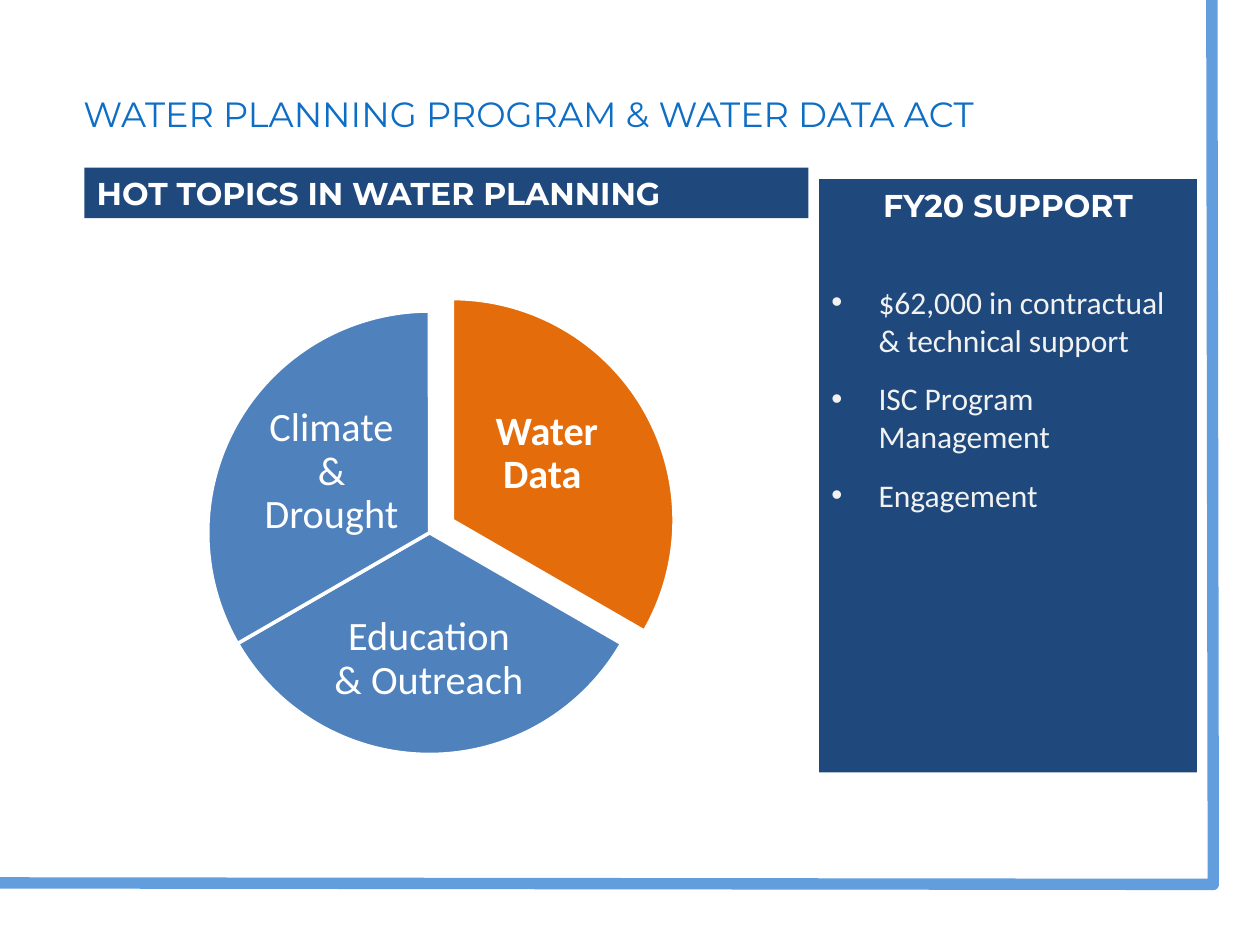
from lxml import etree
from pptx import Presentation
from pptx.dml.color import RGBColor
from pptx.enum import shapes, text
from pptx.oxml import ns
from pptx.util import Cm, Pt

HUES = {"title": "0E6EC5", "navy": "1F497D", "white": "FFFFFF", "pale": "F2F2F2",
        "orange": "E46C0A", "blue": "4F81BD", "frame": "629EDE"}
HEAD = {"name": "Montserrat", "size": Pt(18), "bold": True}
ITEM = {"name": "Calibri", "size": Pt(18), "bold": False}
LABEL = {"name": "Calibri", "size": Pt(23)}
LEFT, MID = text.PP_ALIGN.LEFT, text.PP_ALIGN.CENTER
TOP, CORE = text.MSO_ANCHOR.TOP, text.MSO_ANCHOR.MIDDLE


def hue(key):
    return RGBColor.from_string(HUES[key])


def assign(item, vals):
    for key, val in vals.items():
        setattr(item, key, val)


def place(shape, box):
    assign(shape, dict(zip(("left", "top", "width", "height"), map(Cm, box))))


def fill(shape, key):
    shape.fill.solid()
    shape.fill.fore_color.rgb = hue(key)


def setup(frame, anchor=TOP, pads=(0.25, 0.13, 0.25, 0.13)):
    """Wrap the text, fix its anchor and set its insets in cm."""
    assign(frame, {"word_wrap": True, "auto_size": text.MSO_AUTO_SIZE.NONE,
                   "vertical_anchor": anchor})
    sides = ("margin_left", "margin_top", "margin_right", "margin_bottom")
    assign(frame, dict(zip(sides, map(Cm, pads))))


def write(para, words, font, key, **vals):
    assign(para, {"alignment": LEFT, "space_before": Pt(0), **vals})
    run = para.add_run()
    run.text = words
    assign(run.font, font)
    run.font.color.rgb = hue(key)


def bullet(para, char=None, hang=0):
    """Give a paragraph a bullet, or none, with a hanging indent in cm."""
    props = para._p.get_or_add_pPr()
    props.set("marL", str(Cm(hang)))
    props.set("indent", str(-Cm(hang)))
    mark = etree.SubElement(props, ns.qn("a:buChar" if char else "a:buNone"))
    if char:
        mark.set("char", char)


def title(slide, box):
    shape = slide.shapes.title
    place(shape, box)
    setup(shape.text_frame, pads=(0, 0.18, 0, 0))
    write(shape.text_frame.paragraphs[0], "WATER PLANNING PROGRAM & WATER DATA ACT",
          {"name": "Montserrat", "size": Pt(20)}, "title", line_spacing=0.9)


def banner(slide, box):
    shape = slide.shapes.add_shape(shapes.MSO_SHAPE.RECTANGLE, *map(Cm, box))
    shape.shadow.inherit = False
    fill(shape, "navy")
    shape.line.fill.background()
    setup(shape.text_frame)
    write(shape.text_frame.paragraphs[0], "HOT TOPICS IN WATER PLANNING", HEAD, "white")


def support(slide, box):
    shape = slide.placeholders[1]
    place(shape, box)
    fill(shape, "navy")
    frame = shape.text_frame
    setup(frame)
    bullet(frame.paragraphs[0])
    write(frame.paragraphs[0], "FY20 SUPPORT", HEAD, "white", alignment=MID)
    items = ("$62,000 in contractual & technical support",
             "ISC Program Management", "Engagement")
    for i, words in enumerate(items):
        para = frame.add_paragraph()
        bullet(para, "•", 0.95)
        write(para, words, ITEM, "pale", space_before=Pt(12 if i else 34))


def topics(slide, box):
    """Draw three equal wedges with labels, the first one pulled out."""
    x, y, w, h = box
    group = slide.shapes.add_group_shape().shapes
    parts = (
        ("Water Data ", "orange", True, (0.46, -0.25), (5.31, 1.4, 3.05, 2.97)),
        ("Education & Outreach", "blue", False, (0, 0), (2.44, 5.64, 4.04, 2.77)),
        ("Climate & Drought", "blue", False, (0, 0), (0.97, 1.76, 3.05, 2.97)),
    )
    for i, (words, key, bold, (dx, dy), (lx, ly, lw, lh)) in enumerate(parts):
        wedge = group.add_shape(shapes.MSO_SHAPE.PIE,
                                *map(Cm, (x + dx, y + dy, w, h)))
        for j in range(2):  # 0.6 units to a degree, clockwise from the right
            wedge.adjustments[j] = (270 + 120 * (i + j)) % 360 * 0.6
        wedge.shadow.inherit = False
        fill(wedge, key)
        wedge.line.color.rgb = hue("white")
        wedge.line.width = Pt(2)
        label = group.add_textbox(*map(Cm, (x + lx, y + ly, lw, lh)))
        setup(label.text_frame, CORE, (0.08,) * 4)
        write(label.text_frame.paragraphs[0], words, {**LABEL, "bold": bold},
              "white", alignment=MID, line_spacing=0.9)


def border(slide, box):
    x, y, w, h = box
    pen = slide.shapes.build_freeform(Cm(x + w - 0.03), Cm(y))
    pen.add_line_segments([(Cm(x + w), Cm(y + h)), (Cm(x), Cm(y + h - 0.03))],
                          close=False)
    shape = pen.convert_to_shape()
    shape.shadow.inherit = False
    shape.fill.background()
    shape.line.color.rgb = hue("frame")
    shape.line.width = Pt(6.5)
    etree.SubElement(shape.line._get_or_add_ln(), ns.qn("a:round"))


def main():
    deck = Presentation()
    assign(deck, {"slide_width": Cm(25.4), "slide_height": Cm(19.05)})
    slide = deck.slides.add_slide(deck.slide_layouts[1])
    title(slide, (1.68, 1.78, 22.1, 0.94))
    banner(slide, (1.7, 3.38, 14.6, 1.02))
    support(slide, (16.51, 3.61, 7.62, 11.96))
    topics(slide, (4.19, 6.27, 8.94, 8.94))
    border(slide, (0, 0, 24.46, 17.83))
    deck.save("out.pptx")


if __name__ == "__main__":
    main()
